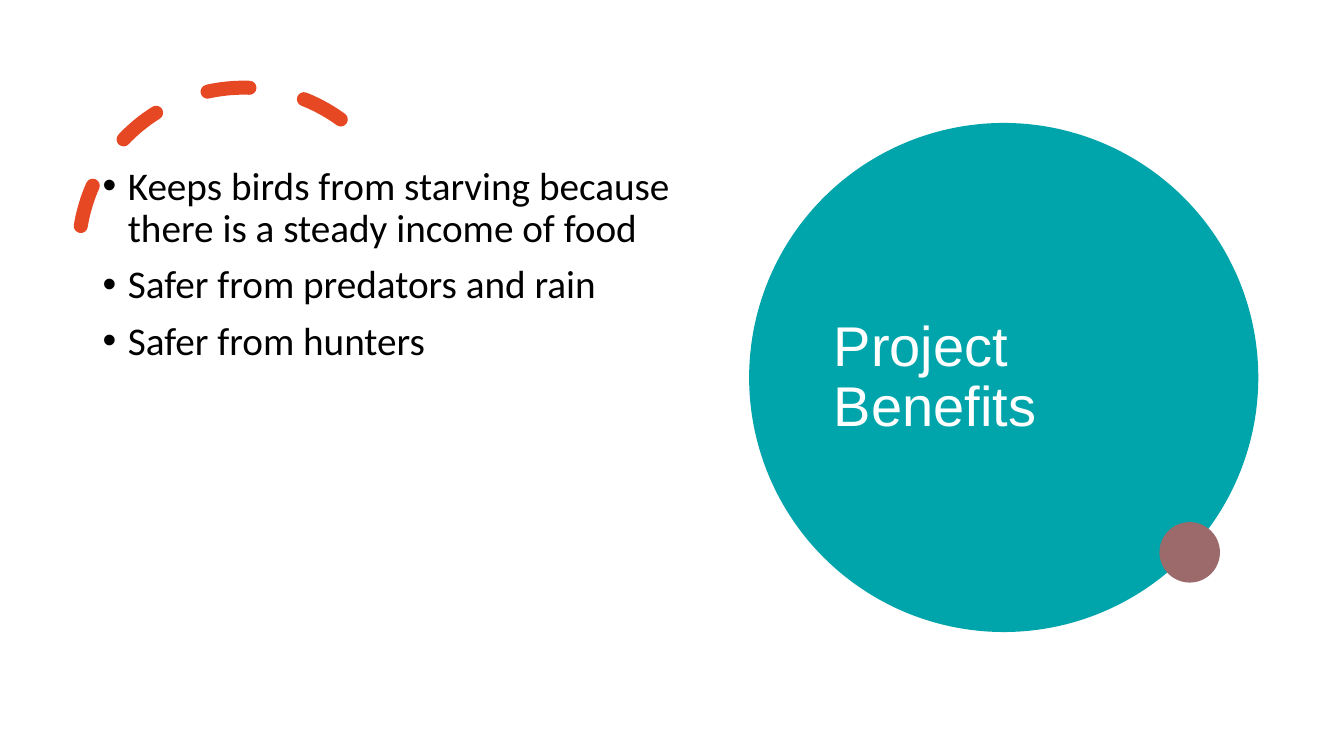
from dataclasses import dataclass

from lxml.etree import SubElement
from pptx import Presentation
from pptx.dml.color import RGBColor
from pptx.enum.dml import MSO_LINE
from pptx.enum.shapes import MSO_SHAPE as Shape
from pptx.enum.text import MSO_ANCHOR as Anchor, MSO_AUTO_SIZE as AutoSize, PP_ALIGN as Align
from pptx.oxml.ns import qn
from pptx.util import Inches, Pt

WHITE = RGBColor(0xFF, 0xFF, 0xFF)
BLACK = RGBColor(0x00, 0x00, 0x00)
TEAL = RGBColor(0x00, 0xA5, 0xAB)
MAUVE = RGBColor(0x9C, 0x6A, 0x6A)
ORANGE = RGBColor(0xE6, 0x48, 0x23)

BENEFITS = [
    "Keeps birds from starving because there is a steady income of food",
    "Safer from predators and rain",
    "Safer from hunters",
]


@dataclass(frozen=True)
class Disc:
    left: float
    top: float
    diameter: float
    color: RGBColor


TITLE_DISC = Disc(7.43, 1.22, 5.05, TEAL)
ACCENT_DISC = Disc(11.5, 5.18, 0.6, MAUVE)


def add_disc(page, disc: Disc) -> None:
    size = Inches(disc.diameter)
    shape = page.shapes.add_shape(Shape.OVAL, Inches(disc.left), Inches(disc.top), size, size)
    shape.shadow.inherit = False
    shape.fill.solid()
    shape.fill.fore_color.rgb = disc.color
    shape.line.fill.background()


def add_dashed_arc(page) -> None:
    size = Inches(3.27)
    arc = page.shapes.add_shape(Shape.ARC, Inches(0.78), Inches(0.87), size, size)
    arc.shadow.inherit = False
    arc.adjustments[0] = 158.17
    arc.adjustments[1] = 17.81
    arc.rotation = 29.8
    arc._element.spPr.find(qn("a:xfrm")).set("flipH", "1")
    arc.fill.background()
    arc.line.color.rgb = ORANGE
    arc.line.width = Pt(10)
    arc.line.dash_style = MSO_LINE.DASH
    arc._element.spPr.find(qn("a:ln")).set("cap", "rnd")


def write_para(para, text: str, *, font: str, size: float, color: RGBColor,
               before: float = 0, bullet: bool = False) -> None:
    para.alignment = Align.LEFT
    para.line_spacing = 0.9
    para.space_before = Pt(before)
    span = para.add_run()
    span.text = text
    span.font.name = font
    span.font.size = Pt(size)
    span.font.color.rgb = color
    if bullet:
        properties = para._p.get_or_add_pPr()
        properties.set("marL", str(Inches(0.25)))
        properties.set("indent", str(Inches(-0.25)))
        SubElement(properties, qn("a:buFont"), typeface="Arial")
        SubElement(properties, qn("a:buChar"), char="•")


def place_title(page, text: str) -> None:
    title = page.shapes.title
    title.left, title.top = Inches(8.17), Inches(1.53)
    title.width, title.height = Inches(3.54), Inches(4.45)
    frame = title.text_frame
    frame.word_wrap = True
    frame.auto_size = AutoSize.NONE
    frame.vertical_anchor = Anchor.MIDDLE
    write_para(frame.paragraphs[0], text, font="Arial", size=40, color=WHITE)
    page.shapes._spTree.append(title._element)


def add_bullets(page, items: list[str]) -> None:
    box = page.shapes.add_textbox(Inches(0.92), Inches(1.6), Inches(6.05), Inches(4.3))
    frame = box.text_frame
    frame.word_wrap = True
    for index, item in enumerate(items):
        para = frame.add_paragraph() if index else frame.paragraphs[0]
        write_para(para, item, font="Calibri", size=28, color=BLACK, before=10, bullet=True)


def main() -> None:
    deck = Presentation()
    deck.slide_width, deck.slide_height = Inches(13.33), Inches(7.5)
    page = deck.slides.add_slide(deck.slide_layouts[5])
    page.background.fill.solid()
    page.background.fill.fore_color.rgb = WHITE
    add_dashed_arc(page)
    add_disc(page, TITLE_DISC)
    place_title(page, "Project Benefits")
    add_bullets(page, BENEFITS)
    add_disc(page, ACCENT_DISC)
    deck.save("out.pptx")


if __name__ == "__main__":
    main()
